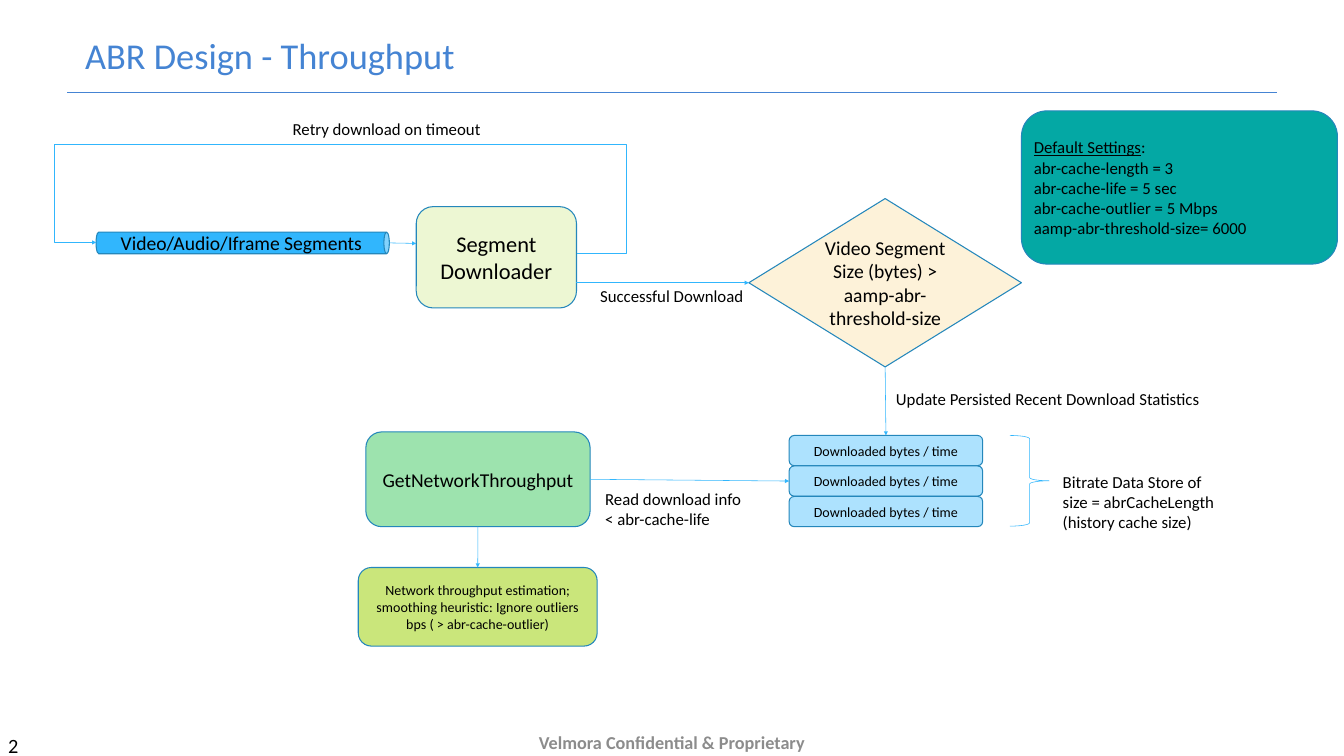
import pptx
import pptx.util
import pptx.dml.color
import pptx.enum.shapes
import pptx.enum.text
import pptx.oxml
import pptx.oxml.ns
from pptx.util import Inches

SHAPE = pptx.enum.shapes.MSO_SHAPE
CONNECTOR = pptx.enum.shapes.MSO_CONNECTOR
ALIGN = pptx.enum.text.PP_ALIGN
ANCHOR = pptx.enum.text.MSO_ANCHOR
AUTO_SIZE = pptx.enum.text.MSO_AUTO_SIZE
COLORS = {
    "title": "4584D3", "text": "000000", "footer": "8C8C8C",
    "arrow": "31B6FD", "border": "2487BB", "segments": "31B6FD",
    "downloader": "EDF7D3", "decision": "FDF2D9", "cache": "ADE2FE",
    "settings": "04A8A4", "throughput": "9DE3AE", "estimate": "CAE67B",
}


def rgb(name):
    return pptx.dml.color.RGBColor.from_string(COLORS[name])


def write(frame, text, size=24, color="text", bold=False, align=ALIGN.LEFT,
          spacing=None, underline=""):
    """Fill a frame with one paragraph per line, underlining a leading phrase."""
    for index, line in enumerate(text.split("\n")):
        para = frame.paragraphs[0] if index == 0 else frame.add_paragraph()
        para.alignment = align
        if spacing:
            para.line_spacing = spacing
        lead = underline if underline and line.startswith(underline) else ""
        for part in filter(None, (lead, line[len(lead):])):
            span = para.add_run()
            span.text = part
            span.font.name = "Calibri"
            span.font.size = pptx.util.Pt(size)
            span.font.bold = bold
            span.font.underline = part == lead
            span.font.color.rgb = rgb(color)


class Diagram:
    """Draws the flow diagram's elements on one page in a shared style."""

    def __init__(self, page):
        self.page = page

    def label(self, text, left, top, width, height, wrap=False, grow=True,
              margins=(0.1, 0.05), anchor=ANCHOR.TOP, **style):
        box = self.page.shapes.add_textbox(*map(Inches, (left, top, width, height)))
        frame = box.text_frame
        frame.word_wrap = wrap
        frame.auto_size = AUTO_SIZE.SHAPE_TO_FIT_TEXT if grow else AUTO_SIZE.NONE
        frame.vertical_anchor = anchor
        frame.margin_left = frame.margin_right = Inches(margins[0])
        frame.margin_top = frame.margin_bottom = Inches(margins[1])
        write(frame, text, **style)

    def node(self, text, left, top, width, height, fill,
             kind=SHAPE.ROUNDED_RECTANGLE, align=ALIGN.CENTER, **style):
        box = self.page.shapes.add_shape(kind, *map(Inches, (left, top, width, height)))
        box.shadow.inherit = False
        box.fill.solid()
        box.fill.fore_color.rgb = rgb(fill)
        box.line.color.rgb = rgb("border")
        box.line.width = pptx.util.Pt(1.5)
        box.text_frame.word_wrap = True
        box.text_frame.vertical_anchor = ANCHOR.MIDDLE
        write(box.text_frame, text, align=align, **style)
        return box

    def brace(self, left, top, width, height):
        brace = self.page.shapes.add_shape(
            SHAPE.RIGHT_BRACE, *map(Inches, (left, top, width, height)))
        brace.shadow.inherit = False
        brace.fill.background()
        brace.line.color.rgb = rgb("arrow")
        brace.line.width = pptx.util.Pt(0.79)

    def line(self, start, end, color="arrow", weight=0.79, arrow=True,
             begin=None, finish=None, kind=CONNECTOR.STRAIGHT):
        line = self.page.shapes.add_connector(kind, *map(Inches, (*start, *end)))
        if begin:
            line.begin_connect(*begin)
        if finish:
            line.end_connect(*finish)
        line.line.color.rgb = rgb(color)
        line.line.width = pptx.util.Pt(weight)
        if arrow:
            stroke = line.line._get_or_add_ln()
            stroke.append(pptx.oxml.parse_xml(
                f'<a:tailEnd {pptx.oxml.ns.nsdecls("a")} type="triangle"/>'))
        line._element.spPr.append(pptx.oxml.parse_xml(
            f'<a:effectLst {pptx.oxml.ns.nsdecls("a")}/>'))
        return line

    def loop(self, start, end, bends):
        """Draw a five-part elbow turned by 180 degrees, from end back to start."""
        line = self.line(start, end, kind=CONNECTOR.ELBOW)
        properties = line._element.spPr
        properties.find(pptx.oxml.ns.qn("a:xfrm")).set("rot", "10800000")
        geometry = properties.find(pptx.oxml.ns.qn("a:prstGeom"))
        geometry.set("prst", "bentConnector5")
        guides = "".join(f'<a:gd name="adj{number}" fmla="val {bend}"/>'
                         for number, bend in enumerate(bends, 1))
        for child in list(geometry):
            geometry.remove(child)
        geometry.append(pptx.oxml.parse_xml(
            f'<a:avLst {pptx.oxml.ns.nsdecls("a")}>{guides}</a:avLst>'))


def main():
    deck = pptx.Presentation()
    deck.slide_width, deck.slide_height = Inches(26.67), Inches(15)
    diagram = Diagram(deck.slides.add_slide(deck.slide_layouts[6]))
    wide = (0.36, 0.18)

    diagram.line((1.33, 1.83), (25.34, 1.83), color="title", weight=1, arrow=False)
    diagram.label("2", -0.2, 14.37, 1.2, 0.85, margins=wide, size=29)
    diagram.label("Velmora Confidential & Proprietary", 0, 14.46, 26.67, 0.54,
                  wrap=True, grow=False, margins=wide, anchor=ANCHOR.MIDDLE,
                  size=26, color="footer", bold=True, align=ALIGN.CENTER)
    diagram.label("ABR Design - Throughput", 1.33, 0.51, 24, 1.31, wrap=True,
                  grow=False, margins=wide, anchor=ANCHOR.MIDDLE, size=52,
                  color="title", spacing=0.8)

    segments = diagram.node("Video/Audio/Iframe Segments", 4.6, 1.91, 0.43, 5.82,
                            "segments", kind=SHAPE.CAN, size=28)
    segments.rotation = 90
    segments.text_frame._txBody.bodyPr.set("vert", "vert270")
    diagram.node("Segment Downloader", 8.26, 4.1, 3.18, 2.01, "downloader", size=32)
    decision = diagram.node("Video Segment Size (bytes) > aamp-abr-threshold-size",
                            14.86, 3.94, 5.41, 3.34, "decision",
                            kind=SHAPE.FLOWCHART_DECISION, size=28)
    cache = [diagram.node("Downloaded bytes / time", 15.66, 8.64 + 0.605 * row,
                          3.84, 0.6, "cache", size=20) for row in range(3)]
    throughput = diagram.node("GetNetworkThroughput", 7.26, 8.57, 4.45, 1.88,
                              "throughput", size=28)
    estimate = diagram.node(
        "Network throughput estimation; smoothing heuristic: Ignore outliers "
        "bps ( > abr-cache-outlier)", 7.11, 11.26, 4.74, 1.56, "estimate", size=20)
    diagram.node("Default Settings:\nabr-cache-length = 3\nabr-cache-life = 5 sec\n"
                 "abr-cache-outlier = 5 Mbps\naamp-abr-threshold-size= 6000",
                 20.27, 2.2, 6.27, 3.04, "settings", align=ALIGN.LEFT,
                 underline="Default Settings")
    diagram.brace(20.04, 8.64, 0.78, 1.8)

    diagram.line((7.73, 4.82), (8.26, 4.83))
    diagram.loop((1.91, 4.81), (11.44, 5.02), (-10300, 1029600, 108800))
    diagram.line((11.44, 5.61), (14.86, 5.61), finish=(decision, 1))
    diagram.line((17.56, 7.28), (17.58, 8.64), begin=(decision, 2), finish=(cache[0], 0))
    diagram.line((11.71, 9.51), (15.66, 9.54), begin=(throughput, 3), finish=(cache[1], 1))
    diagram.line((9.48, 10.45), (9.48, 11.26), begin=(throughput, 2), finish=(estimate, 0))

    diagram.label("Retry download on timeout", 5.71, 2.31, 3.96, 0.5)
    diagram.label("Successful Download", 11.81, 5.61, 3.07, 0.5)
    diagram.label("Update Persisted Recent Download Statistics", 17.68, 7.66, 6.28, 0.5)
    diagram.label("Bitrate Data Store of size = abrCacheLength (history cache size)",
                  20.99, 9.3, 3.24, 1.31, wrap=True)
    diagram.label("Read download info < abr-cache-life", 11.91, 9.64, 3.06, 0.91, wrap=True)

    deck.save("out.pptx")


if __name__ == "__main__":
    main()
